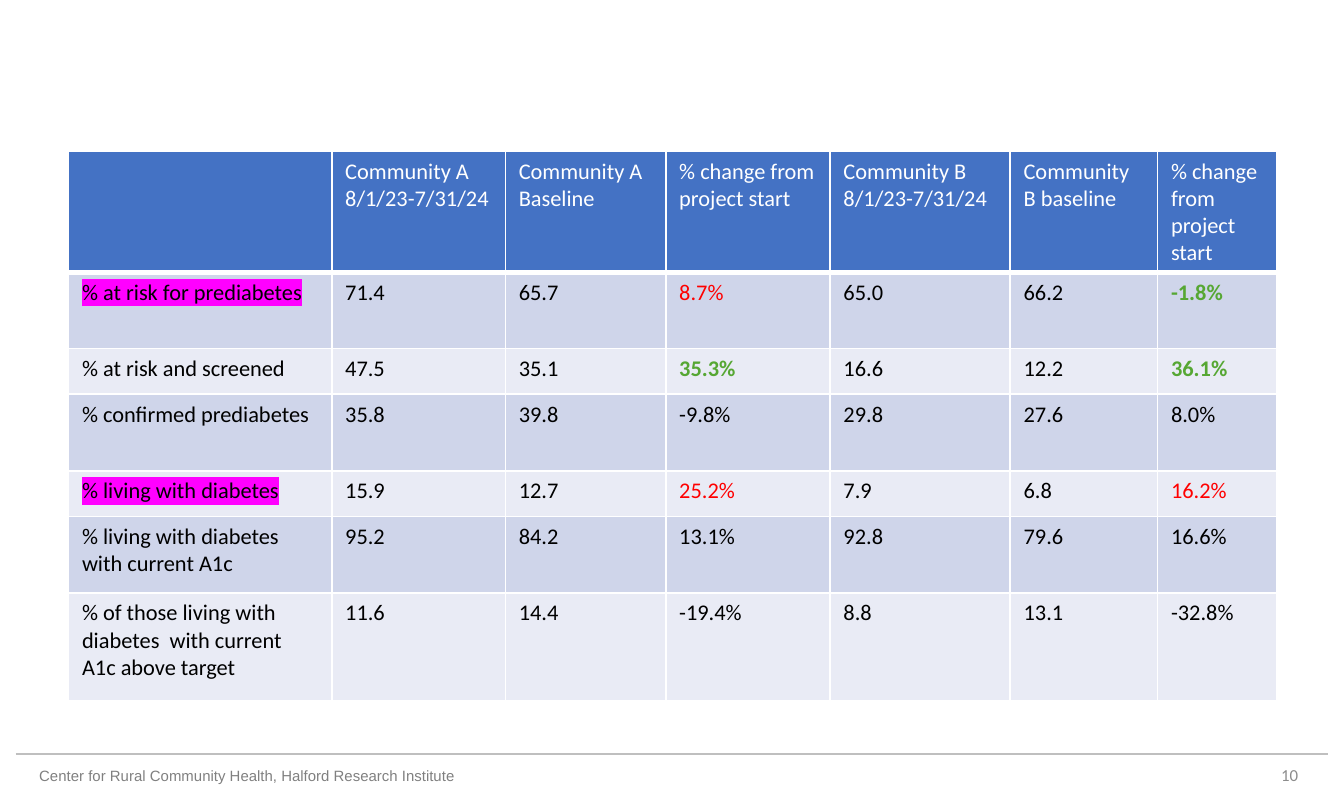
from lxml.etree import SubElement
from pptx import Presentation
from pptx.dml.color import RGBColor
from pptx.enum.shapes import MSO_CONNECTOR
from pptx.enum.text import MSO_ANCHOR, PP_ALIGN
from pptx.oxml import parse_xml
from pptx.oxml.ns import nsdecls, qn
from pptx.util import Pt

WHITE = RGBColor(0xFF, 0xFF, 0xFF)
BLACK = RGBColor(0x00, 0x00, 0x00)
HEADER_BLUE = RGBColor(0x44, 0x72, 0xC4)
BAND_DARK = RGBColor(0xCF, 0xD5, 0xEA)
BAND_LIGHT = RGBColor(0xE9, 0xEB, 0xF5)
WORSE_RED = RGBColor(0xFF, 0x00, 0x00)
BETTER_GREEN = RGBColor(0x56, 0xA7, 0x33)
MAGENTA = RGBColor(0xFF, 0x00, 0xFF)
FOOTER_GRAY = RGBColor(0x80, 0x80, 0x80)
NUMBER_GRAY = RGBColor(0x8C, 0x8C, 0x8C)
RULE_GRAY = RGBColor(0xBF, 0xBF, 0xBF)

HEADINGS = [
    "", "Community A\n8/1/23-7/31/24", "Community A Baseline", "% change from project start",
    "Community B 8/1/23-7/31/24", "Community B baseline", "% change from project start",
]
MEASURES = [
    ["% at risk for prediabetes", "71.4", "65.7", "8.7%", "65.0", "66.2", "-1.8%"],
    ["% at risk and screened", "47.5", "35.1", "35.3%", "16.6", "12.2", "36.1%"],
    ["% confirmed prediabetes", "35.8", "39.8", "-9.8%", "29.8", "27.6", "8.0%"],
    ["% living with diabetes", "15.9", "12.7", "25.2%", "7.9", "6.8", "16.2%"],
    ["% living with diabetes with current A1c",
     "95.2", "84.2", "13.1%", "92.8", "79.6", "16.6%"],
    ["% of those living with diabetes  with current A1c above target",
     "11.6", "14.4", "-19.4%", "8.8", "13.1", "-32.8%"],
]
WORSE = {"8.7%", "25.2%", "16.2%"}
BETTER = {"-1.8%", "35.3%", "36.1%"}
HIGHLIGHTED = {"% at risk for prediabetes", "% living with diabetes"}
COLUMN_WIDTHS = [141, 93, 86, 88, 96.5, 79, 64]
ROW_HEIGHTS = [64, 41, 24.5, 41, 24.5, 41, 58]


class SlideBuilder:
    body_font = "Calibri"
    footer_font = "Arial"
    table_size = 12

    def __init__(self, slide):
        self.slide = slide

    def format_runs(self, text_frame, font, size, color, bold=False):
        for paragraph in text_frame.paragraphs:
            for run in paragraph.runs:
                run.font.name = font
                run.font.size = Pt(size)
                run.font.bold = bold
                run.font.color.rgb = color

    def text(self, words, box, font, size, color, align=PP_ALIGN.LEFT):
        label = self.slide.shapes.add_textbox(*map(Pt, box))
        frame = label.text_frame
        frame.word_wrap = True
        frame.vertical_anchor = MSO_ANCHOR.MIDDLE
        frame.margin_left = frame.margin_right = 0
        frame.margin_top = frame.margin_bottom = 0
        frame.text = words
        frame.paragraphs[0].alignment = align
        self.format_runs(frame, font, size, color)

    def rule(self, left, right, y, color):
        line = self.slide.shapes.add_connector(
            MSO_CONNECTOR.STRAIGHT, Pt(left), Pt(y), Pt(right), Pt(y))
        line.line.color.rgb = color
        line.line.width = Pt(1)
        SubElement(line._element.spPr, qn("a:effectLst"))

    def borders(self, cell, bottom):
        properties = cell._tc.get_or_add_tcPr()
        widths = {"lnL": 1, "lnR": 1, "lnT": 1, "lnB": bottom}
        for position, (side, width) in enumerate(widths.items()):
            properties.insert(position, parse_xml(
                f'<a:{side} {nsdecls("a")} w="{Pt(width)}"><a:solidFill>'
                f'<a:srgbClr val="{WHITE}"/></a:solidFill></a:{side}>'))

    def highlight(self, cell, color):
        for run in cell.text_frame.paragraphs[0].runs:
            fill = run._r.get_or_add_rPr().find(qn("a:solidFill"))
            fill.addnext(parse_xml(
                f'<a:highlight {nsdecls("a")}><a:srgbClr val="{color}"/></a:highlight>'))

    def cell(self, cell, words, fill, color, bold=False, bottom=1):
        cell.text_frame.text = words
        cell.fill.solid()
        cell.fill.fore_color.rgb = fill
        self.format_runs(cell.text_frame, self.body_font, self.table_size, color, bold)
        self.borders(cell, bottom)

    def table(self, left, top, headings, measures):
        frame = self.slide.shapes.add_table(
            len(measures) + 1, len(headings), Pt(left), Pt(top),
            Pt(sum(COLUMN_WIDTHS)), Pt(sum(ROW_HEIGHTS)))
        table = frame.table
        for column, width in zip(table.columns, COLUMN_WIDTHS):
            column.width = Pt(width)
        for row, height in zip(table.rows, ROW_HEIGHTS):
            row.height = Pt(height)
        for column, heading in enumerate(headings):
            self.cell(table.cell(0, column), heading, HEADER_BLUE, WHITE, bottom=3)
        for row, measure in enumerate(measures, 1):
            band = BAND_DARK if row % 2 else BAND_LIGHT
            for column, value in enumerate(measure):
                color = (WORSE_RED if value in WORSE
                         else BETTER_GREEN if value in BETTER else BLACK)
                cell = table.cell(row, column)
                self.cell(cell, value, band, color, bold=value in BETTER)
                if value in HIGHLIGHTED:
                    self.highlight(cell, MAGENTA)


def main():
    presentation = Presentation()
    presentation.slide_width = Pt(720)
    presentation.slide_height = Pt(432)
    builder = SlideBuilder(presentation.slides.add_slide(presentation.slide_layouts[6]))
    builder.text("Center for Rural Community Health, Halford Research Institute",
                 (21, 411, 250, 9.5), builder.footer_font, 8, FOOTER_GRAY)
    builder.rule(8.5, 711.5, 404, RULE_GRAY)
    builder.text("10", (548, 404, 147.5, 23), builder.body_font, 9, NUMBER_GRAY,
                 PP_ALIGN.RIGHT)
    builder.table(36.75, 81, HEADINGS, MEASURES)
    presentation.save("out.pptx")


if __name__ == "__main__":
    main()
